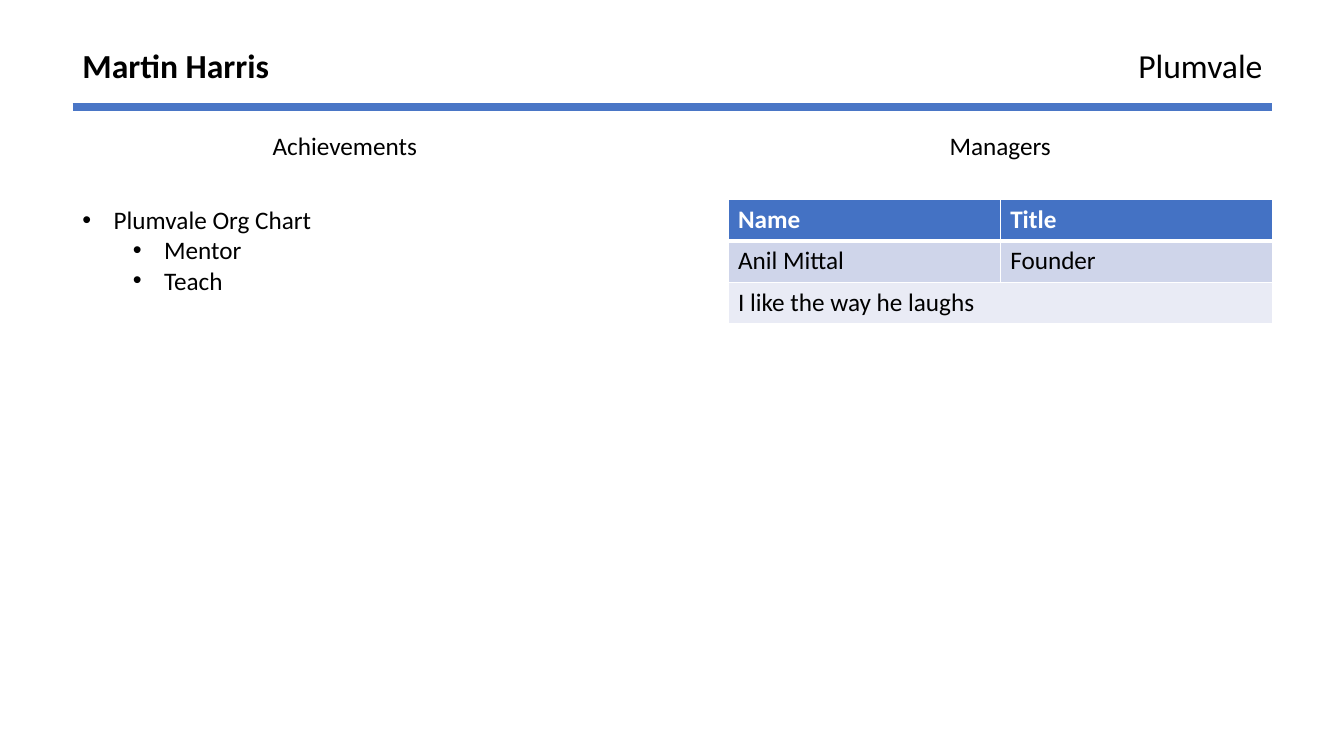
"""Build a one-page employee profile slide with achievements and managers."""
from dataclasses import dataclass

from lxml import etree
from pptx import Presentation
from pptx.dml.color import RGBColor
from pptx.enum.shapes import MSO_CONNECTOR
from pptx.enum.text import MSO_AUTO_SIZE, PP_ALIGN
from pptx.oxml.ns import qn
from pptx.util import Emu, Inches, Pt

LEFT, CENTER, RIGHT = PP_ALIGN.LEFT, PP_ALIGN.CENTER, PP_ALIGN.RIGHT
FIT_SHAPE = MSO_AUTO_SIZE.SHAPE_TO_FIT_TEXT
STRAIGHT = MSO_CONNECTOR.STRAIGHT


@dataclass(frozen=True)
class Theme:
    """Colours, font and sizes."""
    font: str = "Calibri"
    title: int = 24
    body: int = 18
    text: str = "000000"
    white: str = "FFFFFF"
    rule: str = "4A76C6"
    header: str = "4472C4"
    bands: tuple[str, str] = ("CFD5EA", "E9EBF5")


@dataclass(frozen=True)
class Grid:
    """Two equal columns, with row positions in inches."""
    margin: float = 0.72
    col_w: float = 5.4
    gap: float = 1.1
    title_y: float = 0.4
    rule_y: float = 1.06
    heading_y: float = 1.24
    body_y: float = 1.98
    row_h: float = 0.41

    def x(self, col: int) -> float:
        """Return the left edge of a column."""
        return self.margin + col * (self.col_w + self.gap)


@dataclass(frozen=True)
class Label:
    """A single-line text placed in a grid column."""
    text: str
    col: int
    y: float
    h: float
    size: int
    align: int
    bold: bool = False


@dataclass(frozen=True)
class Bullet:
    """A list item and its level."""
    text: str
    level: int = 0


THEME = Theme()
GRID = Grid()
LABELS = [
    Label("Martin Harris", 0, GRID.title_y, 0.5, THEME.title, LEFT, True),
    Label("Plumvale", 1, GRID.title_y, 0.5, THEME.title, RIGHT),
    Label("Achievements", 0, GRID.heading_y, 0.4, THEME.body, CENTER),
    Label("Managers", 1, GRID.heading_y, 0.4, THEME.body, CENTER),
]
BULLETS = [Bullet("Plumvale Org Chart"), Bullet("Mentor", 1), Bullet("Teach", 1)]
MANAGERS = [("Name", "Title"), ("Anil Mittal", "Founder"), ("I like the way he laughs",)]


def write(p, text: str, *, size: int = THEME.body, color: str = THEME.text,
          bold: bool = False, align: int = LEFT) -> None:
    """Put one formatted run into a paragraph."""
    p.alignment = align
    r = p.add_run()
    r.text = text
    r.font.name, r.font.size, r.font.bold = THEME.font, Pt(size), bold
    r.font.color.rgb = RGBColor.from_string(color)


def add_box(slide, col: int, y: float, h: float):
    """Add a wrapping column-wide text box and return its frame."""
    sp = slide.shapes.add_textbox(Inches(GRID.x(col)), Inches(y), Inches(GRID.col_w), Inches(h))
    tf = sp.text_frame
    tf.word_wrap = True
    tf.auto_size = FIT_SHAPE
    return tf


def add_label(slide, label: Label) -> None:
    """Draw a title or a heading."""
    tf = add_box(slide, label.col, label.y, label.h)
    write(tf.paragraphs[0], label.text, size=label.size, bold=label.bold, align=label.align)


def add_bullets(slide, bullets: list[Bullet]) -> None:
    """Draw the achievements list."""
    tf = add_box(slide, 0, GRID.body_y, 1.01)
    for i, bullet in enumerate(bullets):
        p = tf.add_paragraph() if i else tf.paragraphs[0]
        write(p, bullet.text)
        p.level = bullet.level
        pPr = p._p.get_or_add_pPr()
        pPr.set("marL", str(Inches(0.31 + 0.5 * bullet.level)))
        pPr.set("indent", str(-Inches(0.31)))
        etree.SubElement(pPr, qn("a:buFont")).set("typeface", "Arial")
        etree.SubElement(pPr, qn("a:buChar")).set("char", "•")


def add_rule(slide) -> None:
    """Draw the line under the title."""
    y = Inches(GRID.rule_y)
    line = slide.shapes.add_connector(
        STRAIGHT, Inches(GRID.x(0)), y, Inches(GRID.x(1) + GRID.col_w), y)
    line.line.color.rgb = RGBColor.from_string(THEME.rule)
    line.line.width = Pt(6)
    etree.SubElement(line._element.spPr, qn("a:effectLst"))


def style_cell(cell, fill: str, top: int, bottom: int) -> None:
    """Set the fill and the white borders of a cell."""
    tcPr = cell._tc.get_or_add_tcPr()
    for side, width in (("L", 1), ("R", 1), ("T", top), ("B", bottom)):
        ln = etree.SubElement(tcPr, qn(f"a:ln{side}"), w=str(Pt(width)))
        solid = etree.SubElement(ln, qn("a:solidFill"))
        etree.SubElement(solid, qn("a:srgbClr"), val=THEME.white)
    cell.fill.solid()
    cell.fill.fore_color.rgb = RGBColor.from_string(fill)


def add_managers(slide, rows: list[tuple[str, ...]]) -> None:
    """Draw the managers table, merging rows that hold one text."""
    n_cols = len(rows[0])
    table = slide.shapes.add_table(
        len(rows), n_cols, Inches(GRID.x(1)), Inches(GRID.body_y),
        Inches(GRID.col_w), Inches(GRID.row_h * len(rows))).table
    for col in table.columns:
        col.width = Emu(Inches(GRID.col_w) // n_cols)
    for i, texts in enumerate(rows):
        header = i == 0
        fill = THEME.header if header else THEME.bands[(i - 1) % 2]
        for j in range(n_cols):
            style_cell(table.cell(i, j), fill, 3 if i == 1 else 1, 3 if header else 1)
        if len(texts) == 1:
            table.cell(i, 0).merge(table.cell(i, n_cols - 1))
        for j, text in enumerate(texts):
            write(table.cell(i, j).text_frame.paragraphs[0], text, bold=header,
                  color=THEME.white if header else THEME.text)


def main() -> None:
    """Build and save the slide."""
    prs = Presentation()
    prs.slide_width, prs.slide_height = Inches(13.33), Inches(7.5)
    slide = prs.slides.add_slide(prs.slide_layouts[6])
    add_managers(slide, MANAGERS)
    for label in LABELS:
        add_label(slide, label)
    add_bullets(slide, BULLETS)
    add_rule(slide)
    prs.save("out.pptx")


if __name__ == "__main__":
    main()
